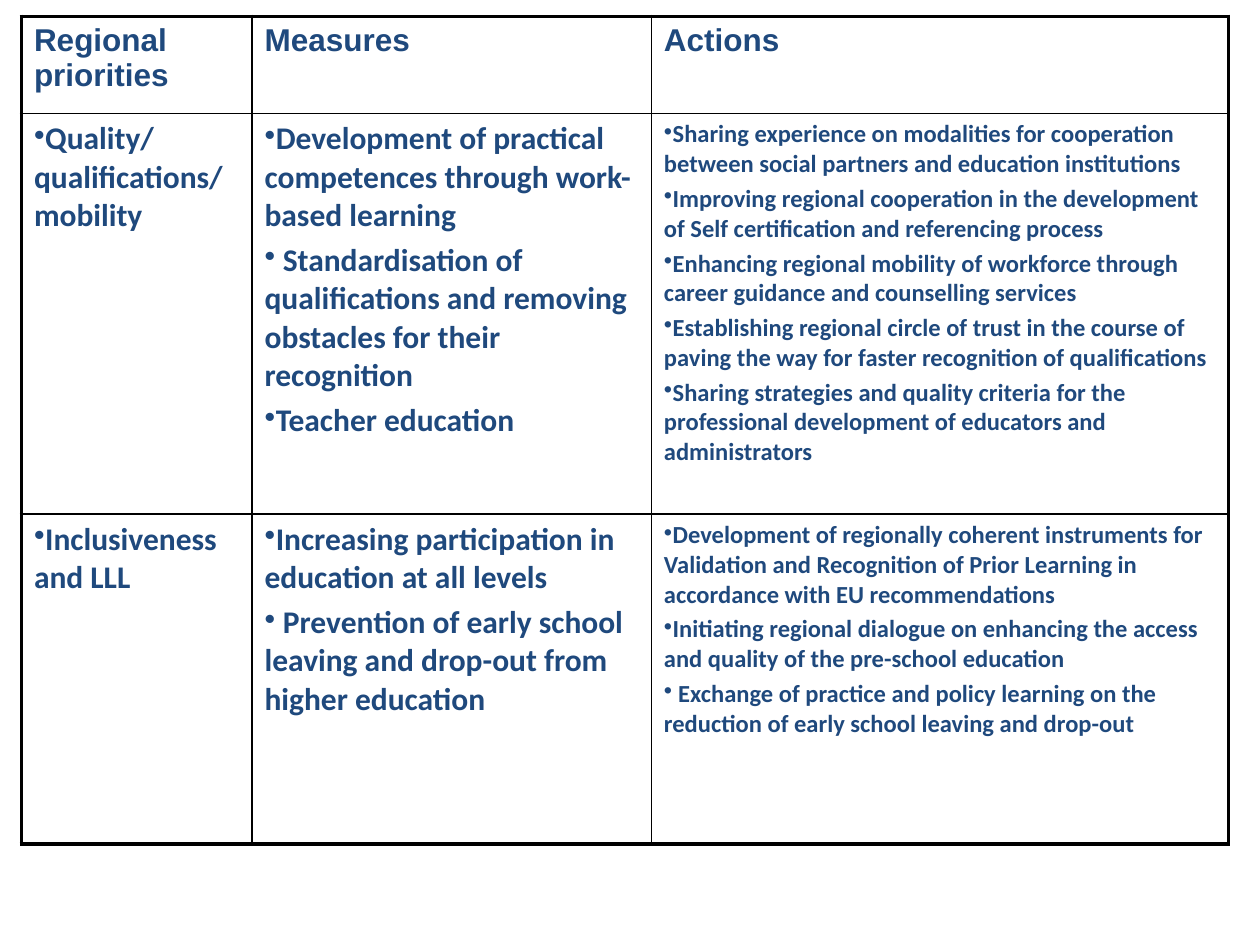
from lxml import etree
from pptx import Presentation
from pptx.dml.color import RGBColor
from pptx.oxml.ns import qn
from pptx.util import Inches, Pt

BLANK_LAYOUT = 6
NAVY, BLACK = "1F497D", "000000"
OUTER_LINE, INNER_LINE = Pt(2.25), Pt(1)
COLUMN_WIDTHS = [1.83, 3.17, 4.58]
ROW_HEIGHTS = [0.77, 3.18, 2.62]
COLUMN_SIZES = [18, 18, 14]

HEADINGS = ["Regional priorities", "Measures", "Actions"]
PRIORITIES = [
    [
        ["Quality/ qualifications/mobility"],
        [
            "Development of practical competences through work-based learning",
            " Standardisation of qualifications and removing obstacles for their recognition",
            "Teacher education",
        ],
        [
            "Sharing experience on modalities for cooperation between social partners and education institutions",
            "Improving regional cooperation in the development of Self certification and referencing process",
            "Enhancing regional mobility of workforce through career guidance and counselling services",
            "Establishing regional circle of trust in the course of paving the way for faster recognition of qualifications",
            "Sharing strategies and quality criteria for the professional development of educators and administrators",
        ],
    ],
    [
        ["Inclusiveness and LLL"],
        [
            "Increasing participation in education at all levels",
            " Prevention of early school leaving and drop-out from higher education",
        ],
        [
            "Development of regionally coherent instruments for Validation and Recognition of Prior Learning in accordance with EU recommendations",
            "Initiating regional dialogue on enhancing the access and quality of the pre-school education",
            " Exchange of practice and policy learning on the reduction of early school leaving and drop-out",
        ],
    ],
]


def rgb(hex_color):
    return RGBColor.from_string(hex_color)


def add_bullet(paragraph):
    properties = paragraph._p.get_or_add_pPr()
    properties.set("marL", "0")
    properties.set("indent", "0")
    etree.SubElement(properties, qn("a:buChar")).set("char", "•")


def write_cell(cell, lines, font_name, size, bulleted):
    frame = cell.text_frame
    for index, line in enumerate(lines):
        paragraph = frame.add_paragraph() if index else frame.paragraphs[0]
        paragraph.text = line
        if bulleted:
            add_bullet(paragraph)
        if index:
            paragraph.space_before = Pt(size * 0.2)
        font = paragraph.font
        font.name, font.size, font.bold = font_name, Pt(size), True
        font.color.rgb = rgb(NAVY)


def set_borders(cell, outer_edges):
    """Draw all four borders, thicker on the edges named in outer_edges."""
    properties = cell._tc.get_or_add_tcPr()
    for edge in "LRTB":
        width = OUTER_LINE if edge in outer_edges else INNER_LINE
        line = etree.SubElement(properties, qn(f"a:ln{edge}"), w=str(int(width)))
        fill = etree.SubElement(line, qn("a:solidFill"))
        etree.SubElement(fill, qn("a:srgbClr"), val=BLACK)


def outer_edges_of(row, column):
    last_row, last_column = len(ROW_HEIGHTS) - 1, len(COLUMN_WIDTHS) - 1
    at_edge = {"L": column == 0, "R": column == last_column,
               "T": row == 0, "B": row == last_row}
    return [edge for edge, is_outer in at_edge.items() if is_outer]


def add_priorities_table(slide, left, top):
    rows = [[[heading] for heading in HEADINGS]] + PRIORITIES
    table = slide.shapes.add_table(
        len(rows), len(HEADINGS), Inches(left), Inches(top),
        Inches(sum(COLUMN_WIDTHS)), Inches(sum(ROW_HEIGHTS))).table
    table.first_row = table.horz_banding = False
    for column, width in zip(table.columns, COLUMN_WIDTHS):
        column.width = Inches(width)
    for row, height in zip(table.rows, ROW_HEIGHTS):
        row.height = Inches(height)

    for r, row_lines in enumerate(rows):
        for c, lines in enumerate(row_lines):
            cell = table.cell(r, c)
            set_borders(cell, outer_edges_of(r, c))
            cell.fill.background()
            if r == 0:
                write_cell(cell, lines, "Arial", 18, bulleted=False)
            else:
                write_cell(cell, lines, "Calibri", COLUMN_SIZES[c], bulleted=True)


def main():
    presentation = Presentation()
    presentation.slide_width, presentation.slide_height = Inches(10), Inches(7.5)
    slide = presentation.slides.add_slide(presentation.slide_layouts[BLANK_LAYOUT])
    add_priorities_table(slide, left=0.17, top=0.13)
    presentation.save("out.pptx")


if __name__ == "__main__":
    main()
